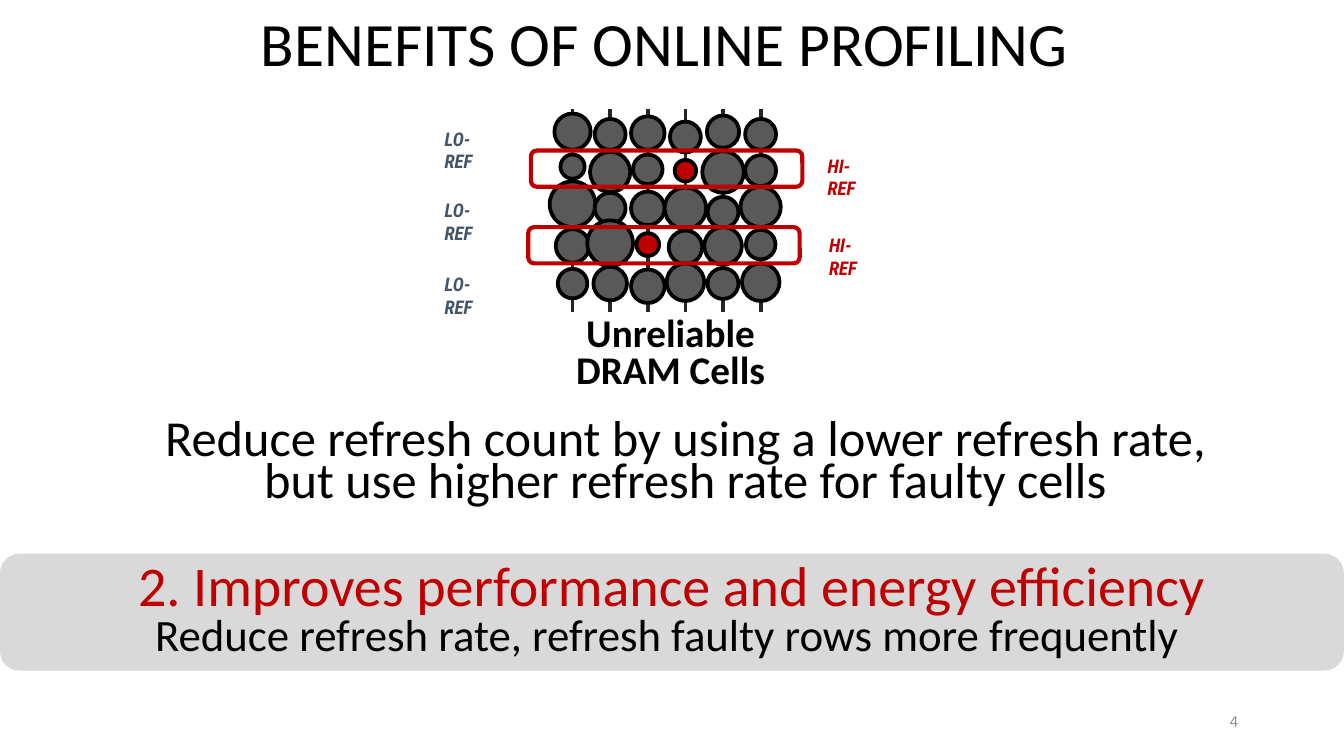
from lxml import etree
from pptx import Presentation
from pptx.dml.color import RGBColor
from pptx.enum.shapes import MSO_CONNECTOR, MSO_SHAPE
from pptx.enum.text import MSO_ANCHOR, PP_ALIGN
from pptx.oxml.ns import qn
from pptx.util import Inches, Pt

LEFT, CENTER, RIGHT = PP_ALIGN.LEFT, PP_ALIGN.CENTER, PP_ALIGN.RIGHT
TOP, MIDDLE = MSO_ANCHOR.TOP, MSO_ANCHOR.MIDDLE
ELLIPSE, ROUNDED = MSO_SHAPE.OVAL, MSO_SHAPE.ROUNDED_RECTANGLE
STRAIGHT = MSO_CONNECTOR.STRAIGHT

BLACK, RED, SLATE = "000000", "C00000", "44546A"
CELL_GRAY, WIRE_GRAY, BANNER_GRAY, NUMBER_GRAY = "595959", "262626", "D9D9D9", "8C8C8C"

TITLE = "BENEFITS OF ONLINE PROFILING"
CAPTION = ["Unreliable", "DRAM Cells"]
EXPLANATION = ["Reduce refresh count by using a lower refresh rate,",
               "but use higher refresh rate for faulty cells"]
BENEFIT = "2. Improves performance and energy efficiency"
METHOD = "Reduce refresh rate, refresh faulty rows more frequently "

# DRAM cells, row by row: (diameter, centre height)
CELL_ROWS = [
    [(0.27, 0.98), (0.23, 1.0), (0.25, 0.99), (0.23, 1.02), (0.24, 0.98), (0.23, 1.0)],
    [(0.18, 1.24), (0.3, 1.28), (0.22, 1.26), (0.16, 1.27), (0.31, 1.28), (0.23, 1.27)],
    [(0.34, 1.52), (0.23, 1.55), (0.25, 1.55), (0.31, 1.55), (0.23, 1.58), (0.3, 1.54)],
    [(0.25, 1.83), (0.34, 1.81), (0.17, 1.82), (0.25, 1.84), (0.28, 1.83), (0.22, 1.82)],
    [(0.22, 2.11), (0.25, 2.11), (0.25, 2.13), (0.28, 2.1), (0.23, 2.11), (0.28, 2.1)],
]
FAULTY_CELLS = {(1, 3), (3, 2)}  # (row, column)
FIRST_COLUMN, COLUMN_STEP = 4.26, 0.28
WIRE_TOP, WIRE_BOTTOM = 0.81, 2.32

FAULTY_ROWS = [(3.95, 1.12), (3.93, 1.69)]  # left, top
REFRESH_LABELS = [  # text, left, top, width, colour
    ("LO-REF", 3.21, 0.9, 0.58, SLATE),
    ("LO-REF", 3.21, 1.43, 0.58, SLATE),
    ("LO-REF", 3.21, 1.98, 0.58, SLATE),
    ("HI-REF", 6.06, 1.1, 0.55, RED),
    ("HI-REF", 6.07, 1.69, 0.55, RED),
]


def color(hex_code):
    return RGBColor.from_string(hex_code)


def write(shape, lines, size, ink=BLACK, font="Calibri", bold=False, italic=False,
          align=CENTER, anchor=TOP, spacing=None, wrap=True):
    """Append each line to the shape as one formatted paragraph."""
    frame = shape.text_frame
    frame.word_wrap = wrap
    frame.vertical_anchor = anchor
    for line in lines:
        first = frame.paragraphs[0]
        paragraph = frame.add_paragraph() if first.runs else first
        paragraph.alignment = align
        if spacing:
            paragraph.line_spacing = spacing
        run = paragraph.add_run()
        run.text = line
        run.font.name = font
        run.font.size = Pt(size)
        run.font.bold = bold
        run.font.italic = italic
        run.font.color.rgb = color(ink)


def add_text(slide, box, lines, **style):
    write(slide.shapes.add_textbox(*map(Inches, box)), lines, **style)


def add_figure(shapes, kind, box, fill=None, line=None, width=2):
    figure = shapes.add_shape(kind, *map(Inches, box))
    figure.shadow.inherit = False
    if fill:
        figure.fill.solid()
        figure.fill.fore_color.rgb = color(fill)
    else:
        figure.fill.background()
    if line:
        figure.line.color.rgb = color(line)
        figure.line.width = Pt(width)
    else:
        figure.line.fill.background()
    return figure


def add_dram_array(slide):
    array = slide.shapes.add_group_shape().shapes
    columns = [FIRST_COLUMN + COLUMN_STEP * i for i in range(len(CELL_ROWS[0]))]
    for x in columns:
        wire = array.add_connector(STRAIGHT, Inches(x), Inches(WIRE_BOTTOM),
                                   Inches(x), Inches(WIRE_TOP))
        wire.line.color.rgb = color(WIRE_GRAY)
        wire.line.width = Pt(2)
        etree.SubElement(wire._element.spPr, qn("a:effectLst"))
    for r, row in enumerate(CELL_ROWS):
        for c, (diameter, y) in enumerate(row):
            fill = RED if (r, c) in FAULTY_CELLS else CELL_GRAY
            box = (columns[c] - diameter / 2, y - diameter / 2, diameter, diameter)
            add_figure(array, ELLIPSE, box, fill, BLACK)


def main():
    deck = Presentation()
    deck.slide_width = Inches(10)
    deck.slide_height = deck.slide_width * 9 // 16
    slide = deck.slides.add_slide(deck.slide_layouts[5])

    title = slide.shapes.title
    title.left, title.top, title.width, title.height = map(Inches, (0.34, -0.2, 9.21, 1.09))
    write(title, [TITLE], size=33, anchor=MIDDLE, spacing=0.9)

    add_dram_array(slide)
    for left, top in FAULTY_ROWS:
        add_figure(slide.shapes, ROUNDED, (left, top, 2.02, 0.27), line=RED, width=2.25)
    for label, left, top, width, ink in REFRESH_LABELS:
        add_text(slide, (left, top, width, 0.27), [label], size=10.1, ink=ink,
                 font="Roboto Condensed", bold=True, italic=True, align=LEFT)
    add_text(slide, (4.18, 2.31, 1.62, 0.67), CAPTION, size=21, bold=True,
             spacing=0.8, wrap=False)

    add_text(slide, (0.1, 3.19, 10, 0.57), EXPLANATION, size=27, anchor=MIDDLE,
             spacing=Pt(22.5))
    banner = add_figure(slide.shapes, ROUNDED, (0, 4.12, 10, 0.87), BANNER_GRAY)
    write(banner, [BENEFIT], size=30, ink=RED, anchor=MIDDLE, spacing=0.8)
    write(banner, [METHOD], size=24, anchor=MIDDLE, spacing=0.8)
    add_text(slide, (7.06, 5.21, 2.25, 0.3), ["4"], size=9, ink=NUMBER_GRAY,
             align=RIGHT, anchor=MIDDLE)

    deck.save("out.pptx")


if __name__ == "__main__":
    main()
